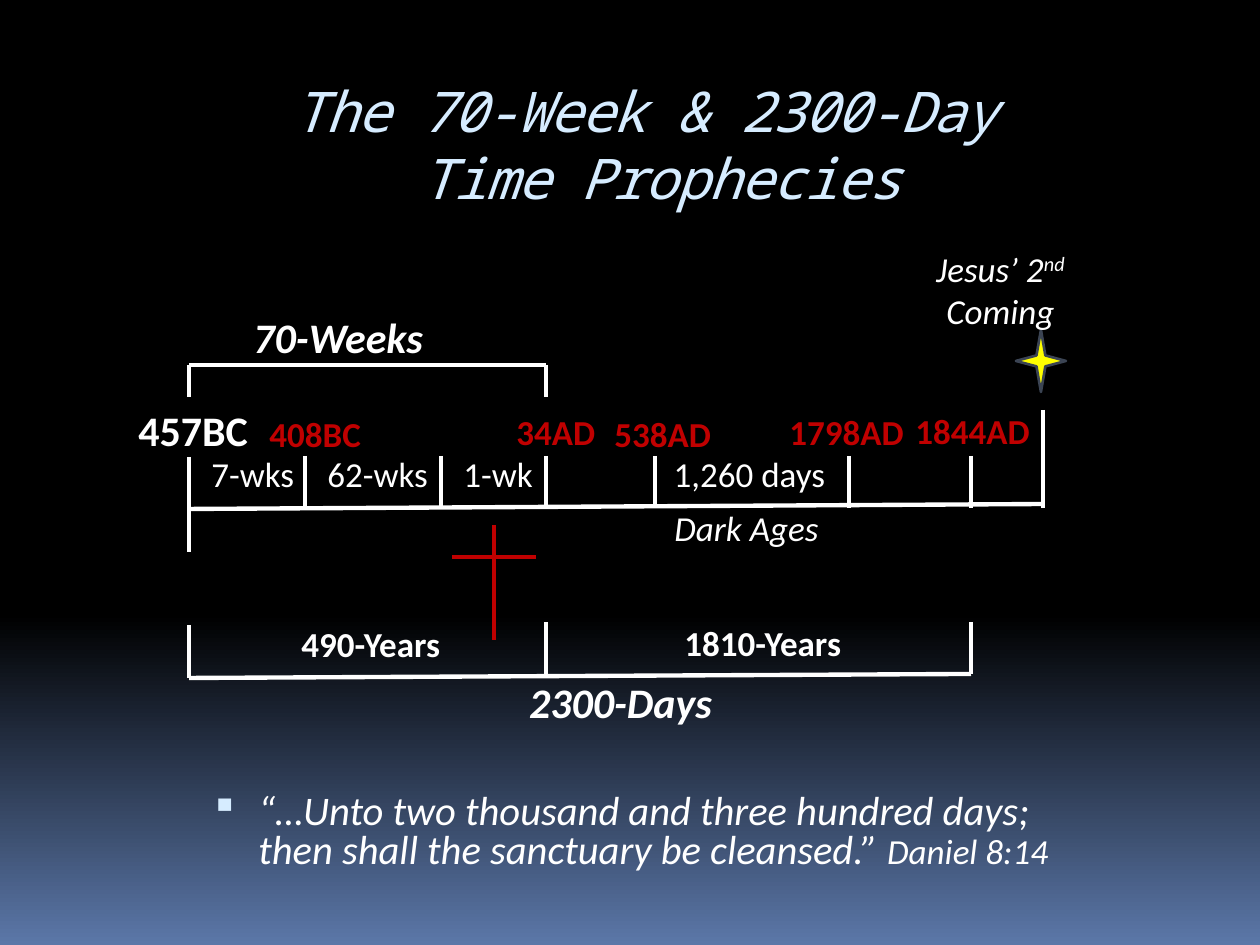
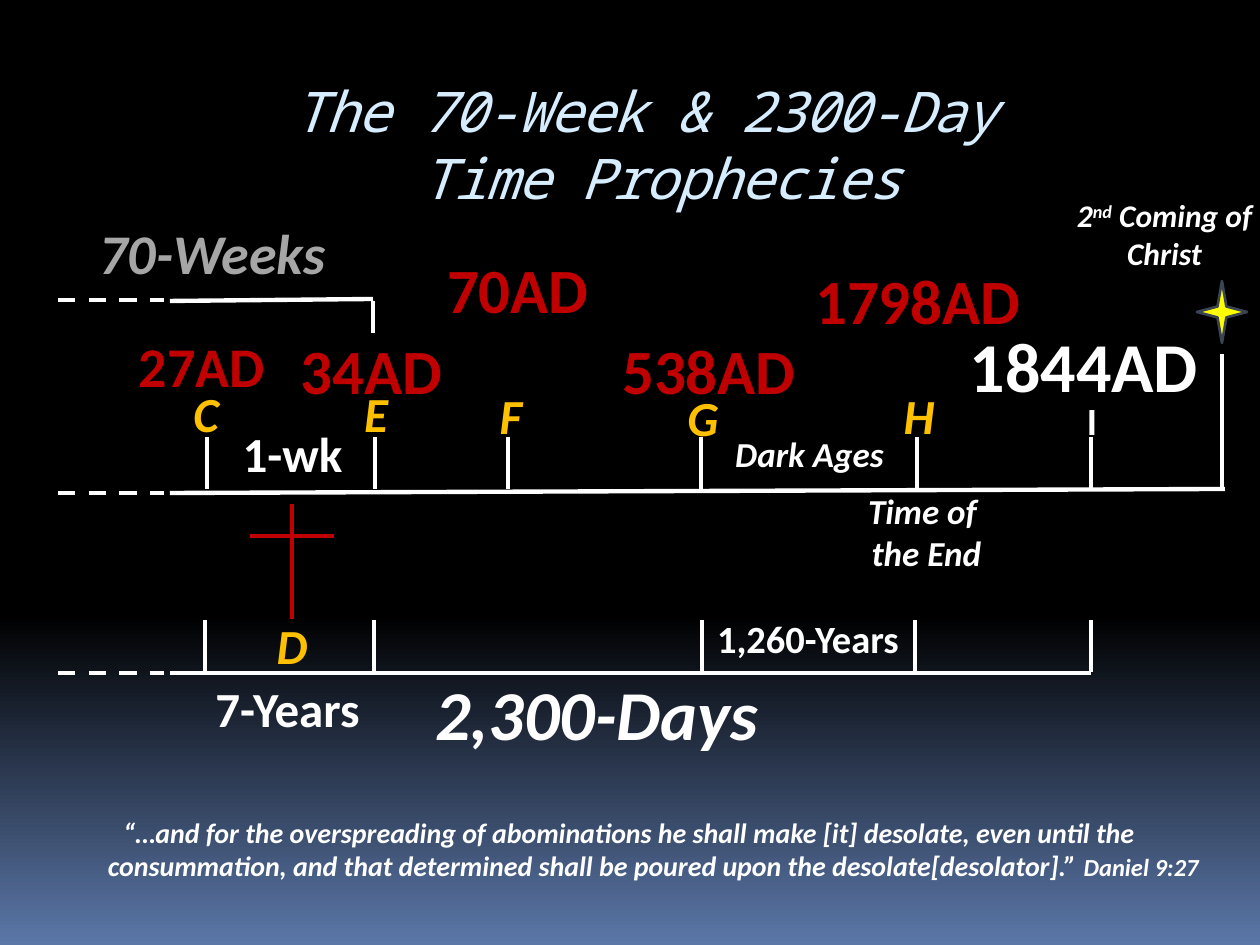
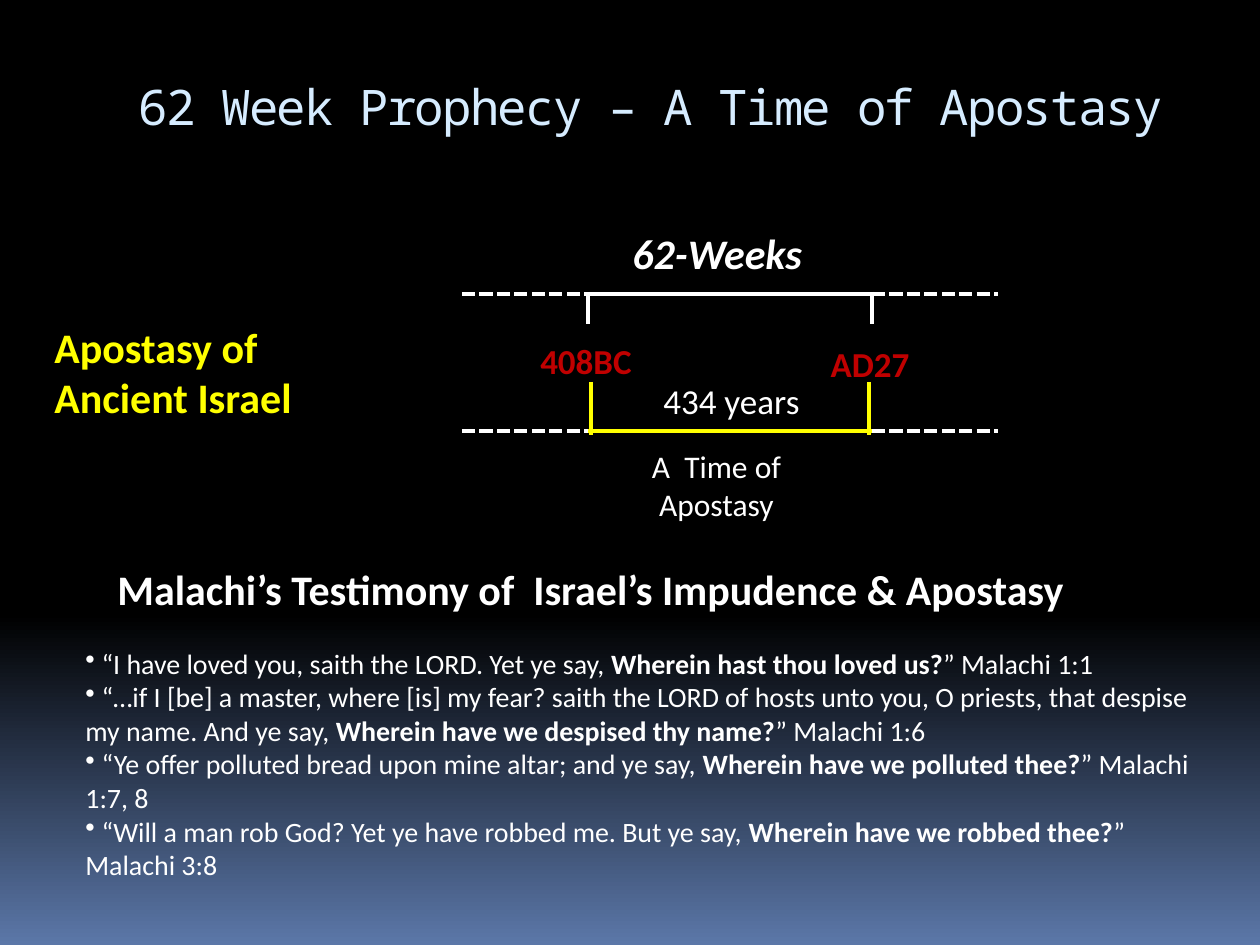
from copy import deepcopy

from lxml.etree import SubElement
from pptx import Presentation
from pptx.dml.color import RGBColor
from pptx.enum.dml import MSO_LINE
from pptx.enum.shapes import MSO_CONNECTOR, MSO_SHAPE
from pptx.enum.text import MSO_ANCHOR, MSO_AUTO_SIZE, PP_ALIGN
from pptx.oxml.ns import qn
from pptx.util import Emu, Pt

PX = 914400 / 126
LEFT, CENTER = PP_ALIGN.LEFT, PP_ALIGN.CENTER


class Theme:
    body_font, title_font = "Calibri", "Noto Sans Mono"
    black, blue, ice = "000000", "5B77A8", "D6ECFF"
    white, grey, red = "FFFFFF", "A6A6A6", "C00000"
    amber, yellow, slate = "FFC000", "FFFF00", "3B4453"
    axis, tick, cross, star = 2.5, 2, 2.25, 1.5  # line widths
    # Text styles: size, colour, bold, italic
    styles = {
        "title": (32, ice, False, True),
        "long title": (28, ice, False, False),
        "plain": (20, white, False, False),
        "slanted": (20, white, False, True),
        "strong": (20, white, True, False),
        "strong slanted": (20, white, True, True),
        "date": (20, red, True, False),
        "end date": (24, white, True, False),
        "period": (24, white, True, True),
        "aside": (24, yellow, True, False),
        "verse": (23.2, white, False, True),
        "small verse": (16, white, True, True),
        "testimony": (16, white, False, False),
        "caption": (18, white, False, False),
        "event": (18, white, True, True),
        "faded": (32, grey, True, True),
        "medium date": (32, red, True, False),
        "big date": (36, red, True, False),
        "huge date": (40, white, True, False),
        "huge period": (40, white, True, True),
        "span": (28, white, True, False),
        "small span": (22, white, True, False),
        "letter": (28, amber, True, True),
    }


def rule(slide, x1, y1, x2, y2, width=Theme.tick, color=Theme.white, dash=None):
    ends = [Emu(round(v * PX)) for v in (x1, y1, x2, y2)]
    line = slide.shapes.add_connector(MSO_CONNECTOR.STRAIGHT, *ends)
    line.line.color.rgb = RGBColor.from_string(color)
    line.line.width = Pt(width)
    if dash:
        line.line.dash_style = dash
    SubElement(line._element.spPr, qn("a:effectLst"))


def words(slide, text, x, y, w, style, align=LEFT, lines=1):
    """Add a text box; text is a string or paragraphs of (text, changes) runs."""
    size, color, bold, italic = Theme.styles[style]
    height = size * 2.13 * lines + 13
    box = slide.shapes.add_textbox(*[Emu(round(v * PX)) for v in (x, y, w, height)])
    frame = box.text_frame
    frame.word_wrap = True
    paragraphs = [[(text, {})]] if isinstance(text, str) else text
    for i, runs in enumerate(paragraphs):
        paragraph = frame.paragraphs[0] if i == 0 else frame.add_paragraph()
        paragraph.alignment = align
        for part, changes in runs:
            run = paragraph.add_run()
            run.text = part
            run.font.color.rgb = RGBColor.from_string(color)
            values = {"name": Theme.body_font, "size": Pt(size), "bold": bold, "italic": italic}
            for key, value in (values | changes).items():
                if key == "baseline":
                    run._r.get_or_add_rPr().set(key, value)
                else:
                    setattr(run.font, key, value)
    return frame


deck = Presentation()
deck.slide_width, deck.slide_height = Emu(round(1260 * PX)), Emu(round(945 * PX))

# Shared background: black, fading to blue below 65 %
master = deck.slide_master
backdrop = master.background.fill
backdrop.gradient()
backdrop.gradient_angle = 270
for stop, color in zip(backdrop.gradient_stops, (Theme.black, Theme.blue)):
    stop.color.rgb = RGBColor.from_string(color)
first_stop = master.element.find(".//" + qn("a:gs"))
middle_stop = deepcopy(first_stop)
middle_stop.set("pos", "65000")
first_stop.addnext(middle_stop)

# Slides and titles
PROPHECIES = "The 70-Week & 2300-Day \vTime Prophecies"
slides = []
for heading, style, align in [
    (PROPHECIES, "title", CENTER),
    (PROPHECIES, "title", CENTER),
    ("62 Week Prophecy – A Time of Apostasy", "long title", LEFT),
]:
    slide = deck.slides.add_slide(deck.slide_layouts[5])
    slides.append(slide)
    title = slide.shapes.title
    place = {"left": 126, "top": 70, "width": 1071, "height": 126}
    for key, value in place.items():
        setattr(title, key, Emu(round(value * PX)))
    frame = title.text_frame
    frame.text = heading
    for key, value in {"vertical_anchor": MSO_ANCHOR.TOP, "word_wrap": True,
                       "auto_size": MSO_AUTO_SIZE.NONE}.items():
        setattr(frame, key, value)
    frame.paragraphs[0].alignment = align
    size, color, bold, italic = Theme.styles[style]
    for run in frame.paragraphs[0].runs:
        for key, value in {"name": Theme.title_font, "size": Pt(size),
                           "bold": bold, "italic": italic}.items():
            setattr(run.font, key, value)
        run.font.color.rgb = RGBColor.from_string(color)
        run._r.get_or_add_rPr().set("spc", "-100")
overview, closing, apostasy = slides

# Cross and star on both timelines
for slide, cross_x, cross_y, star_x, star_y in [
    (overview, 494, 525, 1016, 330),
    (closing, 292, 504, 1197, 281),
]:
    rule(slide, cross_x - 42, cross_y + 32, cross_x + 42, cross_y + 32, Theme.cross, Theme.red)
    rule(slide, cross_x, cross_y, cross_x, cross_y + 115, Theme.cross, Theme.red)
    star = slide.shapes.add_shape(
        MSO_SHAPE.STAR_4_POINT, *[Emu(round(v * PX)) for v in (star_x, star_y, 50, 62)])
    star.shadow.inherit = False
    star.fill.solid()
    star.fill.fore_color.rgb = RGBColor.from_string(Theme.yellow)
    star.line.color.rgb = RGBColor.from_string(Theme.slate)
    star.line.width = Pt(Theme.star)

# Slide 1: whole timeline, 70-week bracket above and 2300-day bracket below
for x1, y1, x2, y2 in [(189, 509, 1043, 504), (189, 678, 971, 674), (189, 365, 546, 365)]:
    rule(overview, x1, y1, x2, y2, Theme.axis)
for top, bottom, marks in [
    (457, 552, [189]),
    (456, 508, [305, 441, 546, 655, 849, 971]),
    (410, 508, [1043]),
    (365, 397, [189, 546]),
    (625, 678, [189]),
    (622, 674, [546, 971]),
]:
    for x in marks:
        rule(overview, x, top, x, bottom)

SUPER = {"baseline": "30000"}
for label in [
    ("457BC", 126, 398, 145, "end date"),
    ("408BC", 257, 406, 144, "date"),
    ("34AD", 504, 404, 120, "date"),
    ("538AD", 602, 406, 144, "date"),
    ("1798AD", 777, 404, 155, "date"),
    ("1844AD", 903, 403, 155, "date"),
    ("7-wks", 199, 446, 116, "plain"),
    ("62-wks", 315, 446, 136, "plain"),
    ("1-wk", 451, 446, 105, "plain"),
    ("1,260 days", 658, 446, 183, "plain", CENTER),
    ("Dark Ages", 655, 500, 183, "slanted", CENTER),
    ("490-Years", 289, 616, 204, "strong"),
    ("1810-Years", 672, 615, 200, "strong"),
    ("70-Weeks", 241, 305, 220, "period"),
    ("2300-Days", 495, 670, 251, "period", CENTER),
    ([[("Jesus’ 2", {}), ("nd", SUPER), (" Coming", {})]],
     897, 241, 207, "slanted", CENTER, 2),
]:
    words(overview, *label)

# Slide 2: end of the timeline, entering from the left as dashes
for x1, y1, x2, y2 in [(170, 493, 1225, 489), (170, 673, 1091, 673), (170, 301, 373, 299)]:
    rule(closing, x1, y1, x2, y2, Theme.axis)
for y in (300, 493, 673):
    rule(closing, 58, y, 164, y, Theme.axis, dash=MSO_LINE.DASH)
for top, bottom, marks in [
    (301, 333, [373]),
    (437, 489, [207, 375, 508, 701, 917, 1091]),
    (354, 490, [1222]),
    (620, 672, [205, 374, 702, 915, 1091]),
]:
    for x in marks:
        rule(closing, x, top, x, bottom)

for label in [
    ("27AD", 106, 325, 192, "medium date"),
    ("34AD", 272, 325, 199, "big date"),
    ("70AD", 423, 244, 190, "big date"),
    ("538AD", 587, 325, 244, "big date"),
    ("1798AD", 779, 255, 278, "big date"),
    ("1844AD", 950, 316, 268, "huge date"),
    ("C", 170, 377, 72, "letter"),
    ("D", 256, 609, 72, "letter"),
    ("E", 340, 377, 72, "letter"),
    ("F", 475, 379, 72, "letter"),
    ("G", 667, 381, 72, "letter"),
    ("H", 883, 379, 72, "letter"),
    ("I", 1056, 391, 72, "small span"),
    ("70-Weeks", 58, 212, 309, "faded"),
    ("1-wk", 218, 417, 149, "span"),
    ("7-Years", 184, 672, 207, "span"),
    ("1,260-Years", 684, 609, 248, "small span"),
    ("Dark Ages", 703, 426, 213, "strong slanted"),
    ([[("Time of ", {})], [("the End", {})]], 820, 483, 213, "strong slanted", CENTER, 2),
    ([[("2", {}), ("nd", SUPER), (" Coming of Christ", {})]],
     1061, 190, 207, "event", CENTER, 2),
]:
    words(closing, *label[:5], *(label[5:] or [CENTER]))
words(closing, "2,300-Days", 423, 664, 383, "huge period")

# Verses under the two timelines
daniel_8 = words(overview, [[
    ("“…Unto two thousand and three hundred days; then shall the sanctuary be cleansed.” ", {}),
    ("Daniel 8:14", {"size": Pt(20.1)})]], 189, 788, 882, "verse", LEFT, 2)
daniel_9 = words(closing, [[
    ("“…and for the overspreading of abominations he shall make [it] desolate, even until the "
     "consummation, and that determined shall be poured upon the desolate[desolator].” ", {}),
    ("Daniel 9:27", {"size": Pt(14)})]], 26, 809, 1198, "small verse", CENTER, 2)
for verse in (daniel_8, daniel_9):
    paragraph = verse.paragraphs[0]
    paragraph.space_before = Pt(7)
    layout = paragraph._p.get_or_add_pPr()
    layout.set("marL", str(round(57 * PX)))
    layout.set("indent", str(round(-48 * PX)))
daniel_8.paragraphs[0].line_spacing = 0.8
square = daniel_8.paragraphs[0]._p.pPr
SubElement(SubElement(square, qn("a:buClr")), qn("a:srgbClr")).set("val", Theme.ice)
SubElement(square, qn("a:buSzPct")).set("val", "95000")
SubElement(square, qn("a:buChar")).set("char", "▪")

# Slide 3: the 62 weeks, with dashes running out on both sides
for y, tick_top, tick_bottom, marks, color in [
    (294, 292, 324, (588, 872), Theme.white),
    (431, 382, 435, (591, 869), Theme.yellow),
]:
    for x1, x2 in [(462, 588), (872, 998)]:
        rule(apostasy, x1, y, x2, y, Theme.axis, dash=MSO_LINE.SQUARE_DOT)
    rule(apostasy, 588, y, 872, y, Theme.axis, color)
    for x in marks:
        rule(apostasy, x, tick_top, x, tick_bottom, Theme.tick, color)

for label in [
    ("62-Weeks", 620, 221, 220, "period"),
    ("408BC", 514, 333, 144, "date", CENTER),
    ("AD27", 798, 336, 144, "date", CENTER),
    ("434 years", 651, 373, 168, "plain"),
    ("A  Time of Apostasy", 617, 441, 199, "caption", CENTER, 2),
    ("Apostasy of Ancient Israel", 42, 315, 325, "aside", LEFT, 2),
    ("Malachi’s Testimony of  Israel’s Impudence & Apostasy", 105, 557, 1018, "end date"),
]:
    words(apostasy, *label)

# Malachi's testimony: quotation, bold question, reference
testimony = [
    (" “I have loved you, saith the LORD. Yet ye say, ",
     "Wherein hast thou loved us?", "” Malachi 1:1"),
    (" “…if I [be] a master, where [is] my fear? saith the LORD of hosts unto you, O priests, "
     "that despise my name. And ye say, ",
     "Wherein have we despised thy name?", "” Malachi 1:6"),
    (" “Ye offer polluted bread upon mine altar; and ye say, ",
     "Wherein have we polluted thee?", "” Malachi 1:7, 8"),
    (" “Will a man rob God? Yet ye have robbed me. But ye say, ",
     "Wherein have we robbed thee?", "” Malachi 3:8"),
]
quotes = words(
    apostasy,
    [[(quote, {}), (question, {"bold": True}), (source, {})]
     for quote, question, source in testimony],
    73, 640, 1144, "testimony", LEFT, 7)
for paragraph in quotes.paragraphs:
    SubElement(paragraph._p.get_or_add_pPr(), qn("a:buChar")).set("char", "•")

deck.save("out.pptx")
